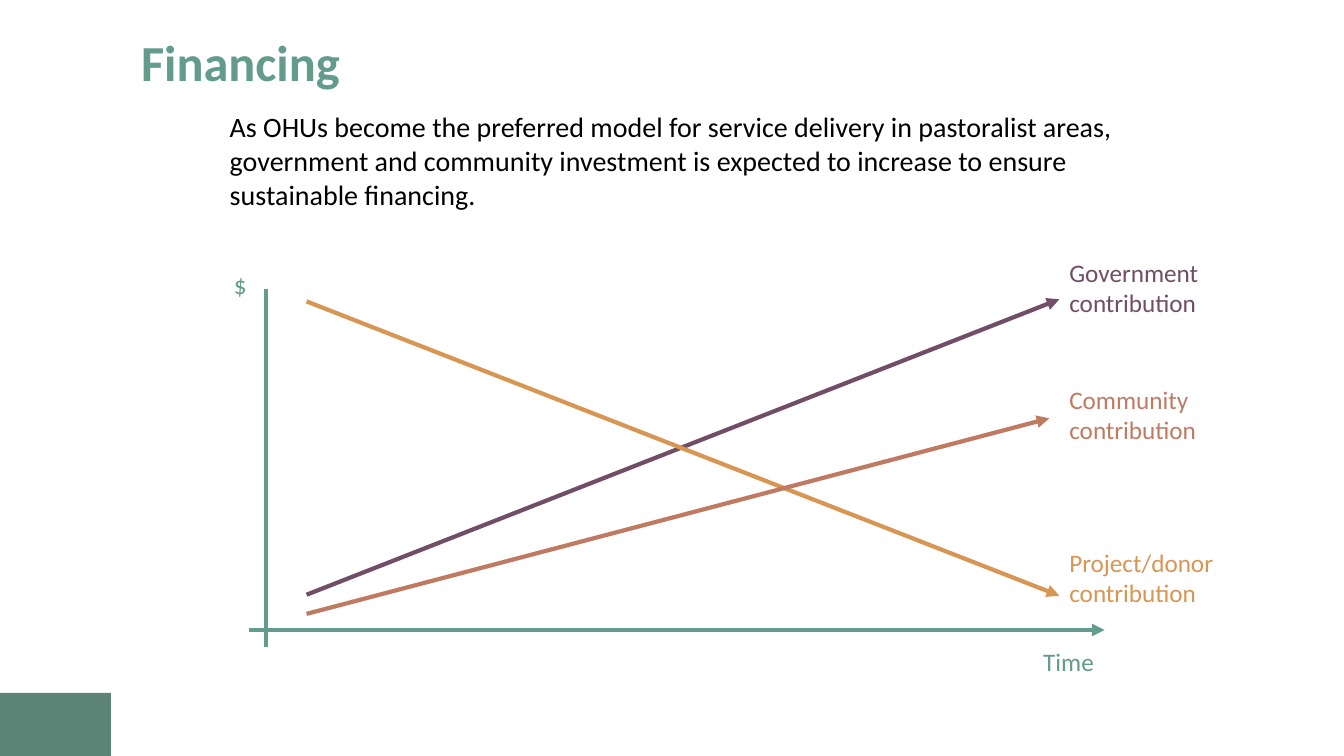
from lxml import etree
from pptx import Presentation
from pptx.dml.color import RGBColor
from pptx.enum.shapes import MSO_CONNECTOR, MSO_SHAPE
from pptx.enum.text import MSO_ANCHOR, MSO_AUTO_SIZE, PP_ALIGN
from pptx.oxml.ns import qn
from pptx.util import Pt

STRAIGHT = MSO_CONNECTOR.STRAIGHT
RECTANGLE = MSO_SHAPE.RECTANGLE
MIDDLE = MSO_ANCHOR.MIDDLE
GROW = MSO_AUTO_SIZE.SHAPE_TO_FIT_TEXT
LEFT = PP_ALIGN.LEFT
TITLE_ONLY = 5

GREEN, DARK_GREEN, BLACK = "639C8C", "5B8477", "000000"
PLUM, ORANGE, CLAY = "724E66", "D79653", "C17A62"

AXES = [
    ((18, 270), (629, 270), True),
    ((30, 282), (30, 26.5), False),
]
TRENDS = [
    ((59, 244.8), (596.7, 33.8), PLUM),
    ((59, 35.3), (596.7, 245.5), ORANGE),
    ((59, 258.5), (589.5, 118.8), CLAY),
]
LABELS = [
    ((596.7, 0, 111.6, 51), ["Government", "contribution"], PLUM),
    ((596.7, 90.7, 106.6, 51), ["Community", "contribution"], CLAY),
    ((596.7, 207.4, 118, 51), ["Project/donor", "contribution"], ORANGE),
    ((578, 278, 51.1, 29), ["Time"], GREEN),
    ((0, 8.6, 23.8, 29), ["$"], GREEN),
]


def rgb(value):
    return RGBColor.from_string(value)


def place(sp, box):
    for name, value in zip(("left", "top", "width", "height"), box):
        setattr(sp, name, Pt(value))


def write(tf, lines, color, size, bold=False):
    formats = {"name": "Calibri", "size": Pt(size), "bold": bold}
    for i, line in enumerate(lines):
        p = tf.paragraphs[0] if i == 0 else tf.add_paragraph()
        p.alignment = LEFT
        r = p.add_run()
        r.text = line
        for name, value in formats.items():
            setattr(r.font, name, value)
        r.font.color.rgb = rgb(color)


def add_text(s, box, lines, color, size, wrap):
    tf = s.shapes.add_textbox(*map(Pt, box)).text_frame
    tf.word_wrap = wrap
    tf.auto_size = GROW
    write(tf, lines, color, size)


def add_line(s, start, end, color, arrow=True):
    sp = s.shapes.add_connector(STRAIGHT, *map(Pt, start + end))
    sp.line.color.rgb = rgb(color)
    sp.line.width = Pt(3)
    if arrow:
        etree.SubElement(sp.line._get_or_add_ln(), qn("a:tailEnd"), type="triangle")
    etree.SubElement(sp._element.spPr, qn("a:effectLst"))


def add_corner(s, box):
    sp = s.shapes.add_shape(RECTANGLE, *map(Pt, box))
    sp.shadow.inherit = False
    sp.fill.solid()
    sp.fill.fore_color.rgb = rgb(DARK_GREEN)
    sp.line.fill.background()


def add_title(s, box):
    sp = s.shapes.title
    place(sp, box)
    tf = sp.text_frame
    tf.vertical_anchor = MIDDLE
    write(tf, ["Financing"], GREEN, 36, True)
    tf.paragraphs[0].line_spacing = 0.9


def add_financing_diagram(s, left, top):
    def at(point):
        return left + point[0], top + point[1]

    for start, end, arrow in AXES:
        add_line(s, at(start), at(end), GREEN, arrow)
    for start, end, color in TRENDS:
        add_line(s, at(start), at(end), color)
    for box, lines, color in LABELS:
        add_text(s, at(box) + box[2:], lines, color, 18, False)


def main():
    prs = Presentation()
    prs.slide_width, prs.slide_height = Pt(960), Pt(540)
    s = prs.slides.add_slide(prs.slide_layouts[TITLE_ONLY])
    add_corner(s, (0, 495, 79.2, 45))
    add_title(s, (93.6, 21, 800, 51))
    add_financing_diagram(s, 160, 180)
    add_text(s, (157, 75, 695.5, 80), [
        "As OHUs become the preferred model for service delivery in pastoralist areas, "
        "government and community investment is expected to increase to ensure "
        "sustainable financing."], BLACK, 20, True)
    prs.save("out.pptx")


if __name__ == "__main__":
    main()
